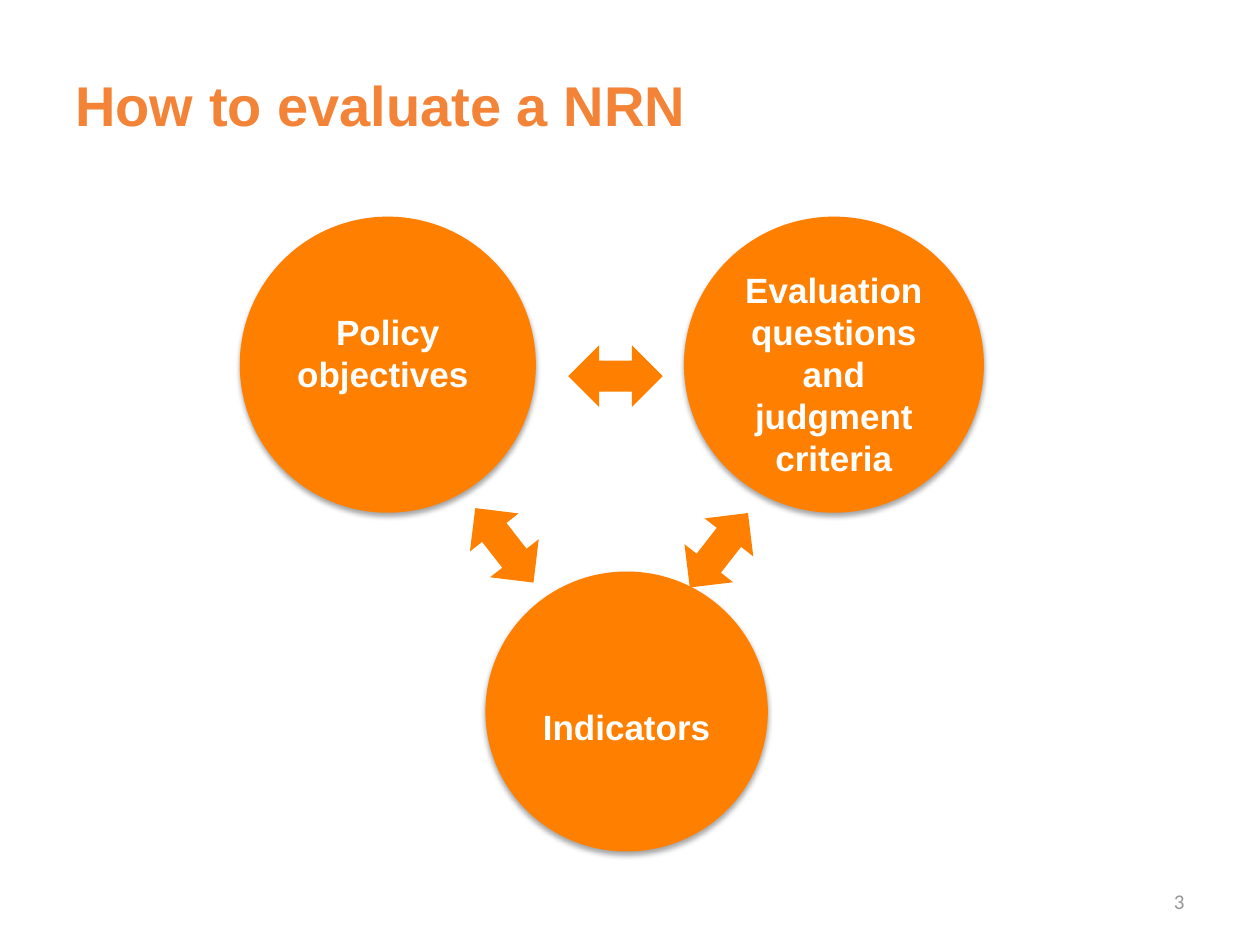
from dataclasses import dataclass

from lxml.etree import SubElement
from pptx import Presentation
from pptx.dml.color import RGBColor
from pptx.enum.shapes import MSO_SHAPE
from pptx.enum.text import MSO_ANCHOR, PP_ALIGN
from pptx.oxml.ns import qn
from pptx.slide import Slide
from pptx.util import Pt

COLORS = {
    "node": "FF8000",
    "node_text": "FFFFFF",
    "title": "F38337",
    "number": "969696",
    "shadow": "000000",
}


@dataclass
class EvaluationSlide:
    """Draw the evaluation cycle in one style on the current slide."""

    slide: Slide
    font: str = "Arial"
    node_size: float = 20
    line_height: float = 24
    arrow_width: float = 54
    arrow_height: float = 35.3

    def color(self, role):
        return RGBColor.from_string(COLORS[role])

    def add_text(self, paragraph, wording, size, role, font, bold):
        run = paragraph.add_run()
        run.text = wording
        run.font.size = Pt(size)
        run.font.name = font
        run.font.bold = bold
        run.font.color.rgb = self.color(role)

    def label(self, bounds, wording, size, role, align=PP_ALIGN.LEFT, font=None, bold=False):
        frame = self.slide.shapes.add_textbox(*map(Pt, bounds)).text_frame
        frame.word_wrap = True
        frame.vertical_anchor = MSO_ANCHOR.MIDDLE
        paragraph = frame.paragraphs[0]
        paragraph.alignment = align
        self.add_text(paragraph, wording, size, role, font or self.font, bold)

    def solid(self, preset, bounds):
        shape = self.slide.shapes.add_shape(preset, *map(Pt, bounds))
        shape.fill.solid()
        shape.fill.fore_color.rgb = self.color("node")
        shape.line.fill.background()
        shape.shadow.inherit = False
        return shape

    def cast_shadow(self, shape):
        effects = shape._element.spPr.find(qn("a:effectLst"))
        shadow = SubElement(
            effects, qn("a:outerShdw"), blurRad=str(Pt(3.1)), dist=str(Pt(1.8)),
            dir="5400000", rotWithShape="0",
        )
        tint = SubElement(shadow, qn("a:srgbClr"), val=COLORS["shadow"])
        SubElement(tint, qn("a:alpha"), val="35000")

    def node(self, bounds, wording, lines_down):
        circle = self.solid(MSO_SHAPE.OVAL, bounds)
        self.cast_shadow(circle)
        frame = circle.text_frame
        frame.word_wrap = True
        frame.vertical_anchor = MSO_ANCHOR.TOP
        frame.margin_top = Pt(5 + lines_down * self.line_height)
        paragraph = frame.paragraphs[0]
        paragraph.alignment = PP_ALIGN.CENTER
        paragraph.line_spacing = Pt(self.line_height)
        self.add_text(paragraph, wording, self.node_size, "node_text", self.font, True)

    def arrow(self, left, top, rotation):
        bounds = (left, top, self.arrow_width, self.arrow_height)
        self.solid(MSO_SHAPE.LEFT_RIGHT_ARROW, bounds).rotation = rotation


def main():
    presentation = Presentation()
    presentation.slide_width, presentation.slide_height = Pt(720), Pt(540)
    page = EvaluationSlide(presentation.slides.add_slide(presentation.slide_layouts[6]))

    page.label((516, 500.4, 168, 28.8), "3", 12, "number", PP_ALIGN.RIGHT, "Calibri")
    for bounds, wording, lines_down in (
        ((390.8, 123.8, 171.4, 169.2), "Evaluation questions and judgment criteria", 0),
        ((137, 123.8, 169.2, 169.2), "Policy objectives ", 1),
        ((277.4, 326.6, 161.4, 160), "Indicators ", 2),
    ):
        page.node(bounds, wording, lines_down)
    for left, top, rotation in ((261.2, 294, 52), (324.7, 197.3, 0), (383.8, 296.8, 308)):
        page.arrow(left, top, rotation)
    page.label((36, 14.4, 648, 90), "How to evaluate a NRN", 32, "title", bold=True)

    presentation.save("out.pptx")


if __name__ == "__main__":
    main()
